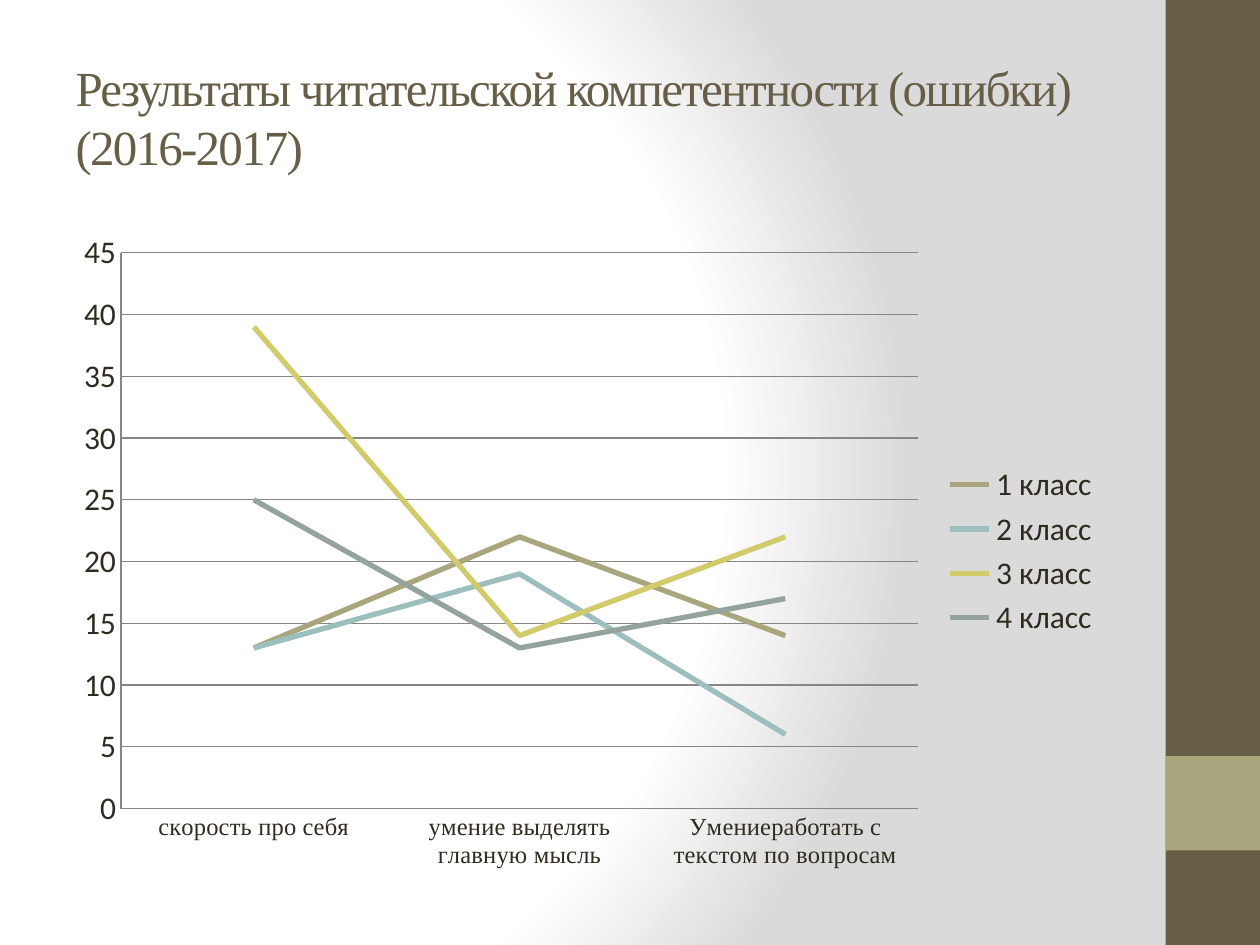
from lxml import etree
from pptx import Presentation, util as u
from pptx.chart.data import CategoryChartData
from pptx.dml.color import RGBColor
from pptx.enum import chart as ch, shapes, text
from pptx.oxml import parse_xml
from pptx.oxml.ns import qn

TITLE = "Результаты читательской компетентности (ошибки)\v(2016-2017)"
CATEGORIES = ["скорость про себя", "умение выделять главную мысль",
              "Умениеработать с текстом по вопросам"]
SERIES = [
    ("1 класс", (13, 22, 14), "A9A57C"),
    ("2 класс", (13, 19, 6), "9CBEBD"),
    ("3 класс", (39, 14, 22), "D2CB6C"),
    ("4 класс", (25, 13, 17), "95A39D"),
]
COLORS = {"brown": "675E47", "olive": "A9A57C", "text": "2F2B20",
          "grid": "868686", "white": "FFFFFF", "gray": "DADADA"}
STOPS = [(0, "white"), (75, "white"), (100, "gray")]
W, H = 10, 7.5
MARGIN, CONTENT_W = 0.05 * W, 8.33
BAND_W = 0.075 * W
BANDS = [("brown", 0, H), ("olive", 0.8 * H, 0.1 * H)]


def rgb(name):
    return RGBColor.from_string(COLORS.get(name, name))


def set_font(font, size, name, color="text"):
    font.size, font.name, font.bold = u.Pt(size), name, False
    font.color.rgb = rgb(color)


def put_text(sp, value, size, name, color, spacing=0):
    tf = sp.text_frame
    tf.word_wrap, tf.auto_size = True, text.MSO_AUTO_SIZE.NONE
    tf.vertical_anchor = text.MSO_ANCHOR.MIDDLE
    tf.text = value
    p = tf.paragraphs[0]
    p.alignment = text.PP_ALIGN.LEFT
    for r in p.runs:
        set_font(r.font, size, name, color)
        r.font._element.set("spc", str(spacing * 100))


def place(sp, *box):
    sp.left, sp.top, sp.width, sp.height = map(u.Inches, box)


def set_background(s):
    s.background.fill.solid()
    solid = s._element.find(".//" + qn("p:bgPr")).find(qn("a:solidFill"))
    grad = parse_xml(
        '<a:gradFill xmlns:a="http://schemas.openxmlformats.org/drawingml/2006/main" rotWithShape="1">'
        '<a:gsLst/><a:path path="circle"><a:fillToRect l="20000" t="50000" r="100000" b="50000"/>'
        '</a:path></a:gradFill>')
    for pos, color in STOPS:
        stop = etree.SubElement(grad[0], qn("a:gs"), pos=str(pos * 1000))
        etree.SubElement(stop, qn("a:srgbClr"), val=COLORS[color])
    solid.getparent().replace(solid, grad)


def add_band(s, color, top, height):
    sp = s.shapes.add_shape(shapes.MSO_SHAPE.RECTANGLE, *map(u.Inches, (W - BAND_W, top, BAND_W, height)))
    sp.shadow.inherit = False
    sp.fill.solid()
    sp.fill.fore_color.rgb = rgb(color)
    sp.line.fill.background()


def style_line(line, color, width):
    line.color.rgb, line.width = rgb(color), u.Pt(width)


def add_results_chart(s):
    data = CategoryChartData()
    data.categories = CATEGORIES
    for name, values, _ in SERIES:
        data.add_series(name, values)
    box = map(u.Inches, (MARGIN, 1.75, CONTENT_W, 5.25))
    chart = s.shapes.add_chart(ch.XL_CHART_TYPE.LINE, *box, data).chart
    set_font(chart.font, 18, "Calibri")
    chart.has_title = False
    chart.has_legend = True
    chart.legend.position = ch.XL_LEGEND_POSITION.RIGHT
    chart.legend.include_in_layout = False
    chart.plots[0].vary_by_categories = False
    for line, (_, _, color) in zip(chart.plots[0].series, SERIES):
        line.smooth = False
        style_line(line.format.line, color, 3)
    for axis in (chart.category_axis, chart.value_axis):
        axis.major_tick_mark = axis.minor_tick_mark = ch.XL_TICK_MARK.NONE
        style_line(axis.format.line, "grid", 0.75)
    set_font(chart.category_axis.tick_labels.font, 14, "Times New Roman")
    chart.value_axis.has_major_gridlines = True
    style_line(chart.value_axis.major_gridlines.format.line, "grid", 0.75)


def main():
    prs = Presentation()
    prs.slide_width, prs.slide_height = u.Inches(W), u.Inches(H)
    s = prs.slides.add_slide(prs.slide_layouts[5])
    set_background(s)
    for band in BANDS:
        add_band(s, *band)
    title = s.shapes.title
    place(title, MARGIN, 0.04 * H, CONTENT_W, 1.25)
    put_text(title, TITLE, 28, "Times New Roman", "brown", spacing=-1)
    add_results_chart(s)
    prs.save("out.pptx")


if __name__ == "__main__":
    main()
